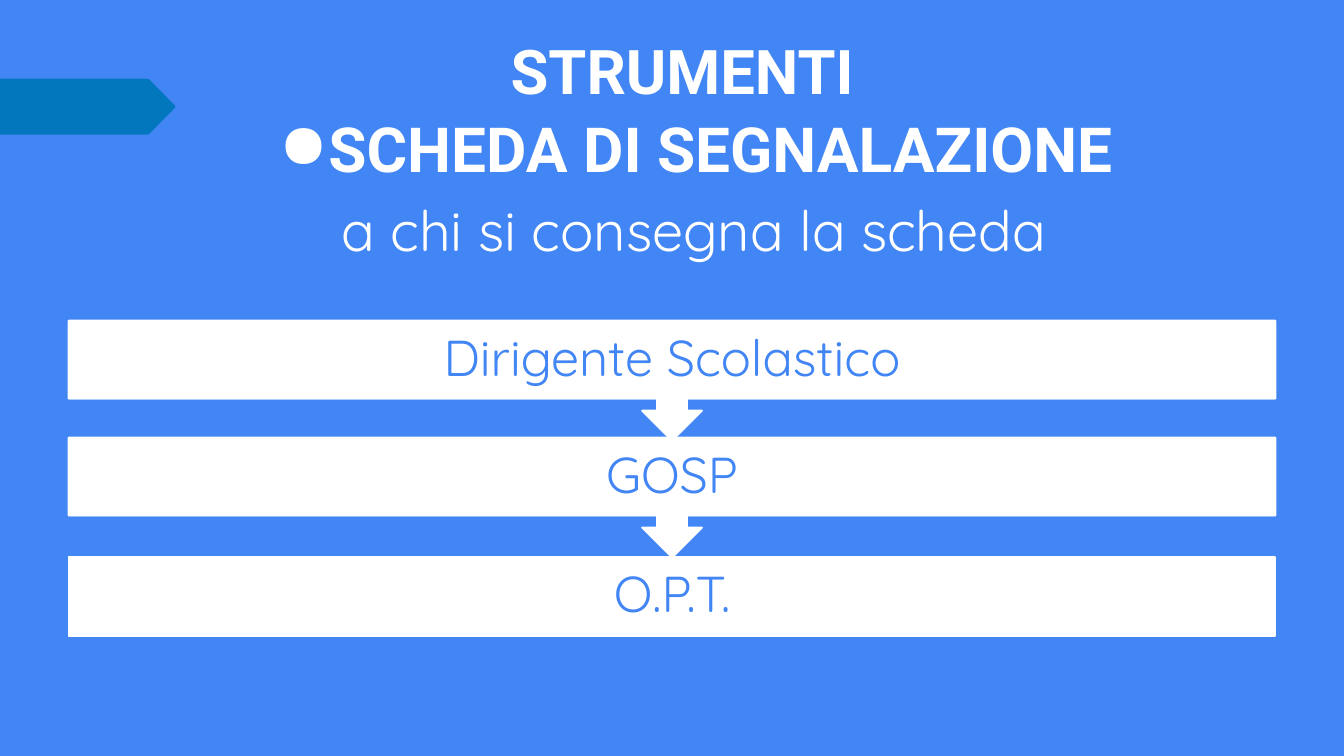
import pptx
import pptx.util
import pptx.dml.color
import pptx.enum.shapes
import pptx.enum.text
import pptx.oxml.ns
from dataclasses import dataclass
from lxml import etree

Pt = pptx.util.Pt
RGB = pptx.dml.color.RGBColor.from_string
MSO_SHAPE = pptx.enum.shapes.MSO_SHAPE
ANCHOR = pptx.enum.text.MSO_ANCHOR


@dataclass(frozen=True)
class Theme:
    blue: str = "4285F4"
    tag: str = "0277BD"
    white: str = "FFFFFF"
    head_font: str = "Roboto"
    body_font: str = "Quicksand"
    title: float = 44
    heading: float = 44.4
    subtitle: float = 40
    step: float = 36


T = Theme()


def write(sp, text, font, size, color, bold=False, inset=(7.2, 3.6),
          anchor=ANCHOR.TOP, spacing=None):
    tf = sp.text_frame
    tf.word_wrap = True
    tf.vertical_anchor = anchor
    tf.margin_left = tf.margin_right = Pt(inset[0])
    tf.margin_top = tf.margin_bottom = Pt(inset[1])
    p = tf.paragraphs[0]
    p.alignment = pptx.enum.text.PP_ALIGN.CENTER
    p.line_spacing = spacing
    r = p.add_run()
    r.text = text
    r.font.name = font
    r.font.size = Pt(size)
    r.font.bold = bold
    r.font.color.rgb = RGB(color)
    return p


def add_bullet(p, char, color, margin, indent):
    qn = pptx.oxml.ns.qn
    pPr = p._p.get_or_add_pPr()
    pPr.set("marL", str(Pt(margin)))
    pPr.set("indent", str(Pt(indent)))
    clr = etree.SubElement(pPr, qn("a:buClr"))
    etree.SubElement(clr, qn("a:srgbClr")).set("val", color)
    etree.SubElement(pPr, qn("a:buChar")).set("char", char)


def add_block(s, kind, x, y, w, h, line=None):
    sp = s.shapes.add_shape(kind, Pt(x), Pt(y), Pt(w), Pt(h))
    sp.shadow.inherit = False
    sp.fill.solid()
    sp.fill.fore_color.rgb = RGB(T.white)
    if line:
        sp.line.color.rgb = RGB(T.white)
        sp.line.width = Pt(line)
    else:
        sp.line.fill.background()
    return sp


def side_tag(s, x, y, w, h):
    tip = y + h / 2
    shoulder = x + w - 19
    fb = s.shapes.build_freeform(Pt(x), Pt(y))
    fb.add_line_segments([(Pt(a), Pt(b)) for a, b in [
        (shoulder - 1, y), (shoulder + 0.5, y + 0.7),
        (x + w - 0.5, tip - 1), (x + w, tip), (x + w - 0.5, tip + 1),
        (shoulder + 0.5, y + h - 0.7), (shoulder - 1, y + h), (x, y + h)]])
    sp = fb.convert_to_shape()
    sp.shadow.inherit = False
    sp.fill.solid()
    sp.fill.fore_color.rgb = RGB(T.tag)
    sp.line.fill.background()


def header(s, x, y, w):
    def box(dx, dy, width, height):
        return s.shapes.add_textbox(Pt(x + dx), Pt(y + dy), Pt(width), Pt(height))

    write(box(0, 0, w, 100.8), "STRUMENTI", T.head_font, T.title, T.white, True)
    p = write(box(2.9, 59, w + 0.7, 59.8), "SCHEDA DI SEGNALAZIONE",
              T.head_font, T.heading, T.white, True, spacing=0.95)
    add_bullet(p, "●", T.white, 27.4, -14.4)
    write(box(51.1, 115.9, w - 85.7, 55.4), "a chi si consegna la scheda",
          T.body_font, T.subtitle, T.white)


def step_chain(s, x, y, w, steps):
    bar, callout = 56.2, 85.7
    last = len(steps) - 1
    for i, (dy, text) in reversed(list(enumerate(steps))):
        if i == last:
            add_block(s, MSO_SHAPE.RECTANGLE, x, y + dy, w, bar, 1.25)
        else:
            sp = add_block(s, MSO_SHAPE.UP_ARROW_CALLOUT, x, y + dy, w, callout, 1.25)
            sp.rotation = 180
            for k, value in enumerate((0.25, 0.25, 0.25, 0.65)):
                sp.adjustments[k] = value
        sp = add_block(s, MSO_SHAPE.RECTANGLE, x, y + dy, w, bar)
        write(sp, text, T.body_font, T.step, T.blue, inset=(20.2, 20.2),
              anchor=ANCHOR.MIDDLE, spacing=0.9)


def main():
    prs = pptx.Presentation()
    prs.slide_width, prs.slide_height = Pt(960), Pt(540)
    s = prs.slides.add_slide(prs.slide_layouts[6])
    s.background.fill.solid()
    s.background.fill.fore_color.rgb = RGB(T.blue)
    side_tag(s, 0, 56.2, 125.3, 40)
    header(s, 76.3, 20.2, 822.2)
    step_chain(s, 49, 229, 862, [
        (0, "Dirigente Scolastico"), (83.5, "GOSP"), (169, "O.P.T.")])
    prs.save("out.pptx")


if __name__ == "__main__":
    main()
